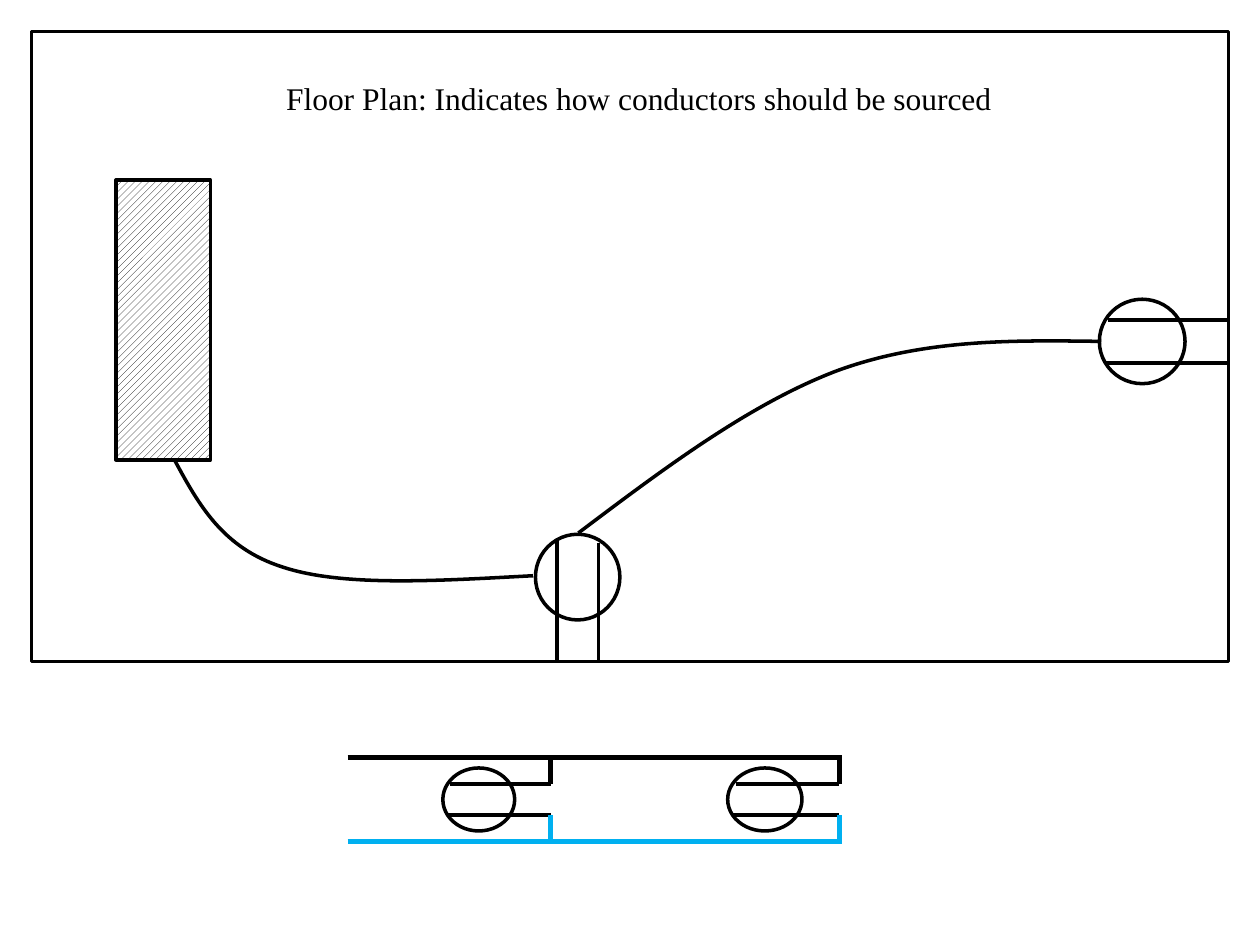
"""Build a floor plan slide showing how conductors should be sourced."""
from dataclasses import dataclass

from lxml import etree
from pptx import Presentation
from pptx.dml.color import RGBColor
from pptx.enum.dml import MSO_PATTERN
from pptx.enum.shapes import MSO_CONNECTOR, MSO_SHAPE
from pptx.enum.text import MSO_ANCHOR, MSO_AUTO_SIZE, PP_ALIGN
from pptx.oxml.ns import qn
from pptx.util import Inches, Pt

RECT, OVAL = MSO_SHAPE.RECTANGLE, MSO_SHAPE.OVAL
STRAIGHT = MSO_CONNECTOR.STRAIGHT
HATCH = MSO_PATTERN.WIDE_UPWARD_DIAGONAL
TITLE_ONLY = 5

Point = tuple[float, float]
Box = tuple[float, float, float, float]


@dataclass(frozen=True)
class Theme:
    black: RGBColor = RGBColor(0x00, 0x00, 0x00)
    white: RGBColor = RGBColor(0xFF, 0xFF, 0xFF)
    blue: RGBColor = RGBColor(0x00, 0xB0, 0xF0)
    font: str = "Times New Roman"
    title_size: float = 18
    outline: float = 2
    lead: float = 2.25
    rail: float = 3


@dataclass(frozen=True)
class Outlet:
    box: Box
    leads: tuple[tuple[Point, Point], ...]
    rotation: float = 0


@dataclass(frozen=True)
class Tap:
    x: float
    oval: Box
    lead_starts: Point


THEME = Theme()
ROOM = (0.25, 0.25, 9.5, 5)
PANEL = (0.92, 1.43, 0.75, 2.22)
PLAN_OUTLETS = (
    Outlet((8.73, 2.37, 0.67, 0.68),
           (((8.77, 2.88), (9.74, 2.88)), ((8.79, 2.54), (9.74, 2.54))), 270),
    Outlet((4.25, 4.24, 0.67, 0.68),
           (((4.42, 4.29), (4.42, 5.26)), ((4.75, 4.31), (4.75, 5.26)))),
)
CABLES = (
    ((1.39, 3.66), (1.58, 4.01), (1.77, 4.35), (2.24, 4.5),
     (2.72, 4.66), (3.47, 4.61), (4.23, 4.57)),
    ((4.59, 4.23), (5.28, 3.71), (5.96, 3.2), (6.65, 2.94),
     (7.34, 2.69), (8.04, 2.7), (8.74, 2.71)),
)
RAIL_LEFT, RAIL_RIGHT = 2.76, 6.68
HOT_Y, NEUTRAL_Y = 6.01, 6.68
LEAD_YS = (6.22, 6.47)
TAPS = (
    Tap(6.66, (5.82, 6.05, 0.5, 0.59), (5.84, 5.82)),
    Tap(4.37, (3.55, 6.06, 0.5, 0.57), (3.57, 3.55)),
)


def style_outline(sp) -> None:
    """Give a shape a plain black outline and no fill."""
    sp.shadow.inherit = False
    sp.fill.background()
    sp.line.color.rgb = THEME.black
    sp.line.width = Pt(THEME.outline)


def add_outline(s, kind, box: Box, rotation: float = 0):
    """Add an unfilled preset shape."""
    sp = s.shapes.add_shape(kind, *map(Inches, box))
    sp.rotation = rotation
    style_outline(sp)
    return sp


def add_line(s, start: Point, end: Point, width: float,
             color: RGBColor = THEME.black) -> None:
    """Add a straight line without a shadow."""
    line = s.shapes.add_connector(STRAIGHT, *map(Inches, start + end))
    line.line.color.rgb = color
    line.line.width = Pt(width)
    etree.SubElement(line._element.spPr, qn("a:effectLst"))


def add_cable(s, points: tuple[Point, ...]) -> None:
    """Add a chain of cubic curves through the given control points."""
    start, *rest = [(Inches(x), Inches(y)) for x, y in points]
    builder = s.shapes.build_freeform(*start)
    builder.add_line_segments(rest, close=False)
    sp = builder.convert_to_shape()
    segments = list(sp._element.iter(qn("a:lnTo")))
    for i in range(0, len(segments), 3):
        curve = etree.Element(qn("a:cubicBezTo"))
        segments[i].addprevious(curve)
        for segment in segments[i:i + 3]:
            curve.append(segment[0])
            segment.getparent().remove(segment)
    style_outline(sp)


def add_outlet(s, outlet: Outlet) -> None:
    """Add an outlet symbol with its leads."""
    add_outline(s, OVAL, outlet.box, outlet.rotation)
    for start, end in outlet.leads:
        add_line(s, start, end, THEME.lead)


def add_circuit(s) -> None:
    """Add the wiring diagram with two outlets across two rails."""
    for tap in TAPS:
        leads = tuple(((x, y), (tap.x, y))
                      for x, y in zip(tap.lead_starts, LEAD_YS))
        add_outlet(s, Outlet(tap.oval, leads, 270))
    rails = ((HOT_Y, LEAD_YS[0], THEME.black),
             (NEUTRAL_Y, LEAD_YS[1], THEME.blue))
    for rail_y, lead_y, color in rails:
        add_line(s, (RAIL_LEFT, rail_y), (RAIL_RIGHT, rail_y), THEME.rail, color)
        for tap in TAPS:
            add_line(s, (tap.x, rail_y), (tap.x, lead_y), THEME.rail, color)


def add_title(s, text: str) -> None:
    """Place and format the title."""
    sp = s.shapes.title
    sp.left, sp.top, sp.width, sp.height = map(Inches, (2.17, 0.58, 6.17, 0.4))
    tf = sp.text_frame
    tf.text = text
    tf.word_wrap = True
    tf.auto_size = MSO_AUTO_SIZE.NONE
    tf.vertical_anchor = MSO_ANCHOR.TOP
    p = tf.paragraphs[0]
    p.alignment = PP_ALIGN.LEFT
    r = p.runs[0]
    r.font.name = THEME.font
    r.font.size = Pt(THEME.title_size)
    r.font.color.rgb = THEME.black


def main() -> None:
    """Build and save the slide."""
    prs = Presentation()
    prs.slide_width, prs.slide_height = Inches(10), Inches(7.5)
    s = prs.slides.add_slide(prs.slide_layouts[TITLE_ONLY])
    add_title(s, "Floor Plan: Indicates how conductors should be sourced")
    add_outline(s, RECT, ROOM)
    panel = add_outline(s, RECT, PANEL)
    panel.fill.patterned()
    panel.fill.pattern = HATCH
    panel.fill.fore_color.rgb = THEME.black
    panel.fill.back_color.rgb = THEME.white
    for outlet in PLAN_OUTLETS:
        add_outlet(s, outlet)
    for points in CABLES:
        add_cable(s, points)
    add_circuit(s)
    prs.save("out.pptx")


if __name__ == "__main__":
    main()
